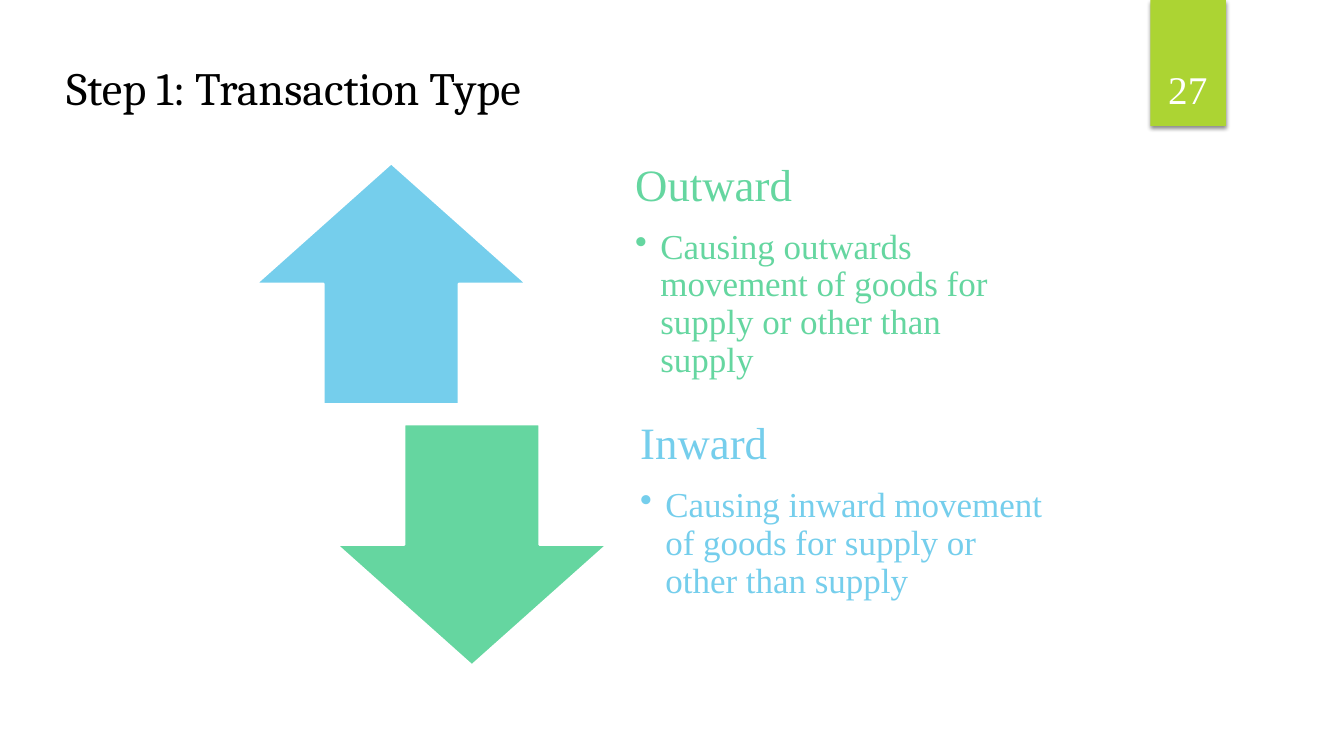
from lxml import etree
from pptx import Presentation
from pptx.dml.color import RGBColor
from pptx.enum.shapes import MSO_SHAPE
from pptx.enum.text import MSO_ANCHOR, PP_ALIGN
from pptx.oxml import parse_xml
from pptx.oxml.ns import nsdecls, qn
from pptx.util import Inches, Pt

BLACK = RGBColor(0x00, 0x00, 0x00)
WHITE = RGBColor(0xFF, 0xFF, 0xFF)
LIME = RGBColor(0xAC, 0xD4, 0x33)
SKY = RGBColor(0x75, 0xCE, 0xEC)
MINT = RGBColor(0x65, 0xD6, 0xA0)

SERIF = "Times New Roman"
ROW_HEIGHT = 2.39
SHADOW = f"""<a:effectLst {nsdecls('a')}>
  <a:outerShdw blurRad="38100" dist="25400" dir="5400000" rotWithShape="0">
    <a:srgbClr val="000000"><a:alpha val="45000"/></a:srgbClr>
  </a:outerShdw>
</a:effectLst>"""


def add_filled_shape(slide, preset, left, top, width, height, color):
    shape = slide.shapes.add_shape(
        preset, Inches(left), Inches(top), Inches(width), Inches(height))
    shape.shadow.inherit = False
    shape.fill.solid()
    shape.fill.fore_color.rgb = color
    shape.line.fill.background()
    return shape


def add_text_frame(slide, left, top, width, height, anchor):
    box = slide.shapes.add_textbox(
        Inches(left), Inches(top), Inches(width), Inches(height))
    frame = box.text_frame
    frame.word_wrap = True
    frame.vertical_anchor = anchor
    return frame


def style_paragraph(paragraph, text, size, color, font=SERIF):
    paragraph.text = text
    run_font = paragraph.runs[0].font
    run_font.name = font
    run_font.size = Pt(size)
    run_font.color.rgb = color


def add_bullet(paragraph):
    properties = paragraph._p.get_or_add_pPr()
    properties.set("marL", str(Inches(0.25)))
    properties.set("indent", str(Inches(-0.25)))
    etree.SubElement(properties, qn("a:buChar")).set("char", "•")


def add_page_tab(slide, number):
    tab = add_filled_shape(slide, MSO_SHAPE.RECTANGLE, 11.41, 0, 0.75, 1.25, LIME)
    properties = tab._element.spPr
    properties.replace(properties.find(qn("a:effectLst")), parse_xml(SHADOW))
    label = add_text_frame(slide, 11.32, 0.32, 0.92, 0.84, MSO_ANCHOR.BOTTOM)
    style_paragraph(label.paragraphs[0], number, 28, WHITE)
    label.paragraphs[0].alignment = PP_ALIGN.CENTER


def add_title(slide, text):
    frame = add_text_frame(slide, 0.56, 0.6, 10.59, 1.05, MSO_ANCHOR.TOP)
    style_paragraph(frame.paragraphs[0], text, 33, BLACK, "Cambria")
    frame.paragraphs[0].line_spacing = 0.9


def add_arrow(slide, preset, left, top, color):
    arrow = add_filled_shape(slide, preset, left, top, 2.68, ROW_HEIGHT, color)
    arrow.line.color.rgb = WHITE
    arrow.line.width = Pt(1.5)


def add_description(slide, left, top, heading, detail, color, bottom_margin):
    frame = add_text_frame(slide, left, top, 4.54, ROW_HEIGHT, MSO_ANCHOR.MIDDLE)
    frame.margin_left = frame.margin_right = Inches(0.25)
    frame.margin_top = 0
    frame.margin_bottom = Inches(bottom_margin)

    heading_line = frame.paragraphs[0]
    style_paragraph(heading_line, heading, 32, color)
    heading_line.line_spacing = 0.9
    heading_line.space_after = Pt(13)

    detail_line = frame.add_paragraph()
    detail_line.level = 1
    add_bullet(detail_line)
    style_paragraph(detail_line, detail, 25, color)
    detail_line.line_spacing = 0.9
    detail_line.space_after = Pt(4)


def main():
    presentation = Presentation()
    presentation.slide_width = Inches(13.33)
    presentation.slide_height = Inches(7.5)
    slide = presentation.slides.add_slide(presentation.slide_layouts[6])

    add_page_tab(slide, "27")
    add_title(slide, "Step 1: Transaction Type")

    outward_top, inward_top = 1.62, 4.21
    add_arrow(slide, MSO_SHAPE.UP_ARROW, 2.54, outward_top, SKY)
    add_description(
        slide, 6.05, outward_top, "Outward",
        "Causing outwards movement of goods for supply or other than supply",
        MINT, 0.25)
    add_arrow(slide, MSO_SHAPE.DOWN_ARROW, 3.34, inward_top, MINT)
    add_description(
        slide, 6.1, inward_top, "Inward",
        "Causing inward movement of goods for supply or other than supply",
        SKY, 0.68)

    presentation.save("out.pptx")


if __name__ == "__main__":
    main()
